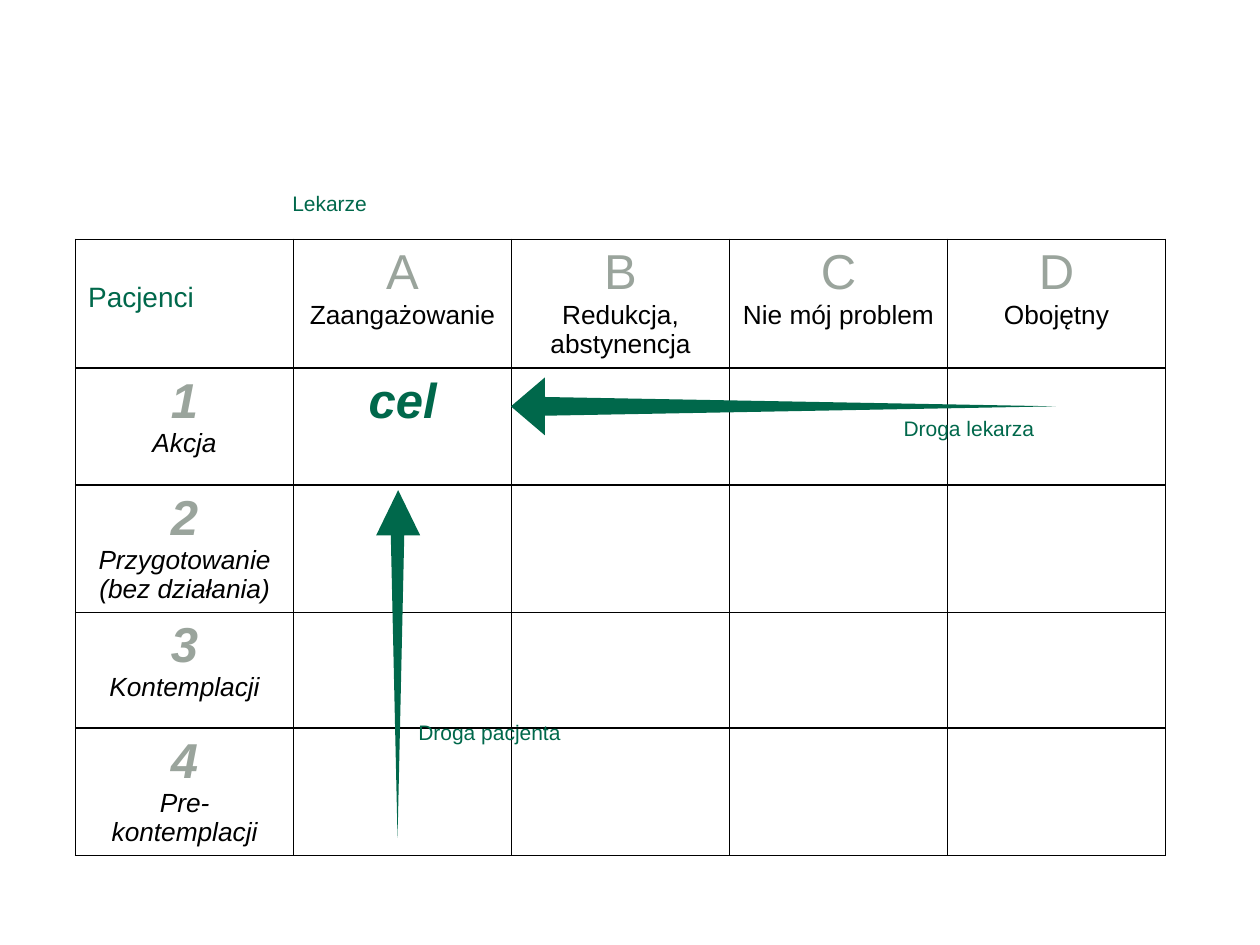
from dataclasses import dataclass

from lxml.etree import SubElement
from pptx import Presentation
from pptx.dml.color import RGBColor
from pptx.enum.shapes import MSO_SHAPE
from pptx.enum.text import MSO_ANCHOR, PP_ALIGN
from pptx.oxml.ns import qn
from pptx.util import Inches, Pt


@dataclass(frozen=True)
class Theme:
    font: str = "Arial"
    green: str = "00684B"
    grey: str = "9AA49C"
    black: str = "000000"
    mark: int = 28
    corner: int = 16
    name: int = 15
    label: int = 12


class SlideBuilder:
    """Places elements on a grid of 100 columns by 75 rows."""

    def __init__(self, prs, theme):
        self.theme = theme
        self.col = prs.slide_width / 100
        self.row = prs.slide_height / 75
        self.slide = prs.slides.add_slide(prs.slide_layouts[6])

    def box(self, x, y, w, h):
        return (round(x * self.col), round(y * self.row),
                round(w * self.col), round(h * self.row))

    def paragraph(self, p, text, size, color, align=PP_ALIGN.CENTER, bold=False, italic=False):
        p.text = text
        p.alignment = align
        f = p.font
        f.name, f.size, f.bold, f.italic = self.theme.font, Pt(size), bold, italic
        f.color.rgb = RGBColor.from_string(color)

    def label(self, text, x, y, w, h, align=PP_ALIGN.LEFT):
        tf = self.slide.shapes.add_textbox(*self.box(x, y, w, h)).text_frame
        tf.word_wrap = True
        tf.margin_left = tf.margin_right = tf.margin_top = tf.margin_bottom = 0
        self.paragraph(tf.paragraphs[0], text, self.theme.label, self.theme.green, align)

    def triangle(self, cx, cy, base, length, rotation):
        """Isosceles triangle about a centre, pointing up before it is turned."""
        sp = self.slide.shapes.add_shape(
            MSO_SHAPE.ISOSCELES_TRIANGLE,
            *self.box(cx - base / 2, cy - length / 2, base, length))
        sp.rotation = rotation
        sp.shadow.inherit = False
        sp.fill.solid()
        sp.fill.fore_color.rgb = RGBColor.from_string(self.theme.green)
        sp.line.fill.background()

    def tapered_arrow(self, head, tail, rotation):
        """Head and tail are (cx, cy, base, length); the tail narrows backwards."""
        self.triangle(*head, rotation)
        self.triangle(*tail, (rotation + 180) % 360)

    def table(self, x, y, col_width, row_heights, columns):
        w, h = col_width * columns, sum(row_heights)
        table = self.slide.shapes.add_table(
            len(row_heights), columns, *self.box(x, y, w, h)).table
        table.first_row = table.horz_banding = False
        for column in table.columns:
            column.width = round(col_width * self.col)
        for row, height in zip(table.rows, row_heights):
            row.height = round(height * self.row)
        for cell in table.iter_cells():
            self.borders(cell)
            cell.fill.background()
        return table

    def borders(self, cell):
        tc_pr = cell._tc.get_or_add_tcPr()
        for side in ("lnL", "lnR", "lnT", "lnB"):
            ln = SubElement(tc_pr, qn(f"a:{side}"), w=str(Pt(1)))
            fill = SubElement(ln, qn("a:solidFill"))
            SubElement(fill, qn("a:srgbClr"), val=self.theme.black)

    def heading(self, cell, mark, name, stage=False):
        """A large mark over a name; stages are italic with a bold mark."""
        t, tf = self.theme, cell.text_frame
        self.paragraph(tf.paragraphs[0], mark, t.mark, t.grey, bold=stage, italic=stage)
        self.paragraph(tf.add_paragraph(), name, t.name, t.black, italic=stage)


DOCTORS = ["Zaangażowanie", "Redukcja, abstynencja", "Nie mój problem", "Obojętny"]
PATIENTS = ["Akcja", "Przygotowanie (bez działania)", "Kontemplacji", "Pre-kontemplacji"]


def main():
    prs = Presentation()
    prs.slide_width, prs.slide_height = Inches(10), Inches(7.5)
    theme = Theme()
    s = SlideBuilder(prs, theme)

    table = s.table(6, 19, 17.3, [10.2, 9.3, 10.1, 9.2, 10.1], len(DOCTORS) + 1)
    corner = table.cell(0, 0)
    corner.vertical_anchor = MSO_ANCHOR.MIDDLE
    corner.margin_bottom = Inches(0.15)
    s.paragraph(corner.text_frame.paragraphs[0], "Pacjenci", theme.corner, theme.green,
                PP_ALIGN.LEFT)
    for i, (letter, name) in enumerate(zip("ABCD", DOCTORS), 1):
        s.heading(table.cell(0, i), letter, name)
    for i, name in enumerate(PATIENTS, 1):
        s.heading(table.cell(i, 0), str(i), name, stage=True)
    s.paragraph(table.cell(1, 1).text_frame.paragraphs[0], "cel", theme.mark, theme.green,
                bold=True, italic=True)

    s.label("Lekarze", 23.2, 15.1, 26.6, 2.5)
    s.label("Droga pacjenta", 33.2, 57.1, 18.5, 5.1)
    s.label("Droga lekarza", 62.9, 33, 28, 5.6, PP_ALIGN.CENTER)

    s.tapered_arrow((41.9, 32.25, 4.6, 2.7), (63.35, 32.25, 1.5, 40.9), 270)
    s.tapered_arrow((31.6, 40.7, 3.5, 3.6), (31.55, 54.15, 1.1, 24.7), 0)

    prs.save("out.pptx")


if __name__ == "__main__":
    main()
